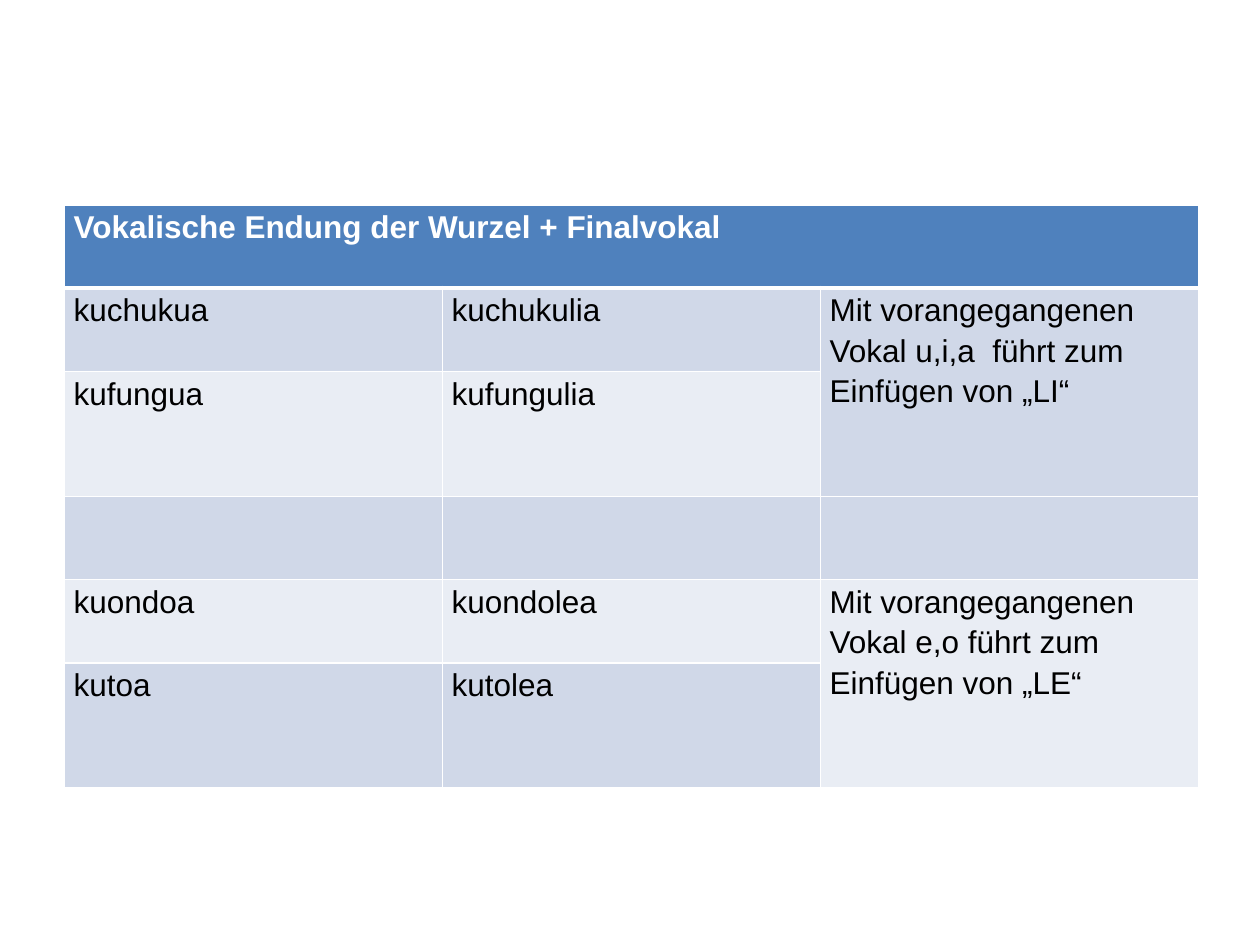
from dataclasses import dataclass

from lxml.etree import SubElement
from pptx import Presentation
from pptx.dml.color import RGBColor
from pptx.oxml.ns import qn
from pptx.table import Table, _Cell
from pptx.util import Pt

COLORS = {
    "header": "4F81BD",
    "dark_band": "D0D8E8",
    "light_band": "E9EDF4",
    "border": "FFFFFF",
    "header_text": "FFFFFF",
    "body_text": "000000",
}
ROW_HEIGHTS = (47.6, 47.6, 71.4, 47.6, 47.6, 71.4)
COLUMN_WIDTH = 216
COLUMN_COUNT = 3


@dataclass(frozen=True)
class Entry:
    """Text of a table cell, its place and the cells it spans."""

    row: int
    column: int
    text: str
    rows: int = 1
    columns: int = 1


ENTRIES = (
    Entry(0, 0, "Vokalische Endung der Wurzel + Finalvokal", columns=3),
    Entry(1, 0, "kuchukua"),
    Entry(1, 1, "kuchukulia"),
    Entry(1, 2, "Mit vorangegangenen Vokal u,i,a  führt zum Einfügen von „LI“", rows=2),
    Entry(2, 0, "kufungua"),
    Entry(2, 1, "kufungulia"),
    Entry(4, 0, "kuondoa"),
    Entry(4, 1, "kuondolea"),
    Entry(4, 2, "Mit vorangegangenen Vokal e,o führt zum Einfügen von „LE“", rows=2),
    Entry(5, 0, "kutoa"),
    Entry(5, 1, "kutolea"),
)


def write_text(cell: _Cell, text: str, *, color: str, bold: bool = False,
               size: float = 18, font: str = "Arial", spacing: float = 1.15) -> None:
    """Write one formatted paragraph into a cell."""
    para = cell.text_frame.paragraphs[0]
    para.line_spacing = spacing
    span = para.add_run()
    span.text = text
    span.font.name = font
    span.font.size = Pt(size)
    span.font.bold = bold
    span.font.color.rgb = RGBColor.from_string(COLORS[color])


def draw_borders(cell: _Cell, *, top: float, bottom: float) -> None:
    """Give a cell white borders with the given widths above and below."""
    properties = cell._tc.get_or_add_tcPr()
    for side, width in {"L": 1, "R": 1, "T": top, "B": bottom}.items():
        line = SubElement(properties, qn(f"a:ln{side}"), w=str(Pt(width)))
        fill = SubElement(line, qn("a:solidFill"))
        SubElement(fill, qn("a:srgbClr"), val=COLORS["border"])


def format_cell(cell: _Cell, row: int) -> None:
    """Set the margins, borders and banded fill of a cell."""
    cell.margin_left = cell.margin_right = Pt(5.2)
    cell.margin_top = cell.margin_bottom = Pt(0)
    draw_borders(cell, top=3 if row == 1 else 1, bottom=3 if row == 0 else 1)
    band = "header" if row == 0 else "dark_band" if row % 2 else "light_band"
    cell.fill.solid()
    cell.fill.fore_color.rgb = RGBColor.from_string(COLORS[band])


def place_entry(table: Table, entry: Entry) -> None:
    """Merge the cells of an entry and write its text."""
    cell = table.cell(entry.row, entry.column)
    if entry.rows > 1 or entry.columns > 1:
        cell.merge(table.cell(entry.row + entry.rows - 1,
                              entry.column + entry.columns - 1))
    header = entry.row == 0
    write_text(cell, entry.text, color="header_text" if header else "body_text", bold=header)


def main() -> None:
    """Build the slide with the table of verb endings."""
    deck = Presentation()
    deck.slide_width, deck.slide_height = Pt(720), Pt(540)
    slide = deck.slides.add_slide(deck.slide_layouts[6])
    table = slide.shapes.add_table(
        len(ROW_HEIGHTS), COLUMN_COUNT, Pt(36.9), Pt(117),
        Pt(COLUMN_WIDTH * COLUMN_COUNT), Pt(sum(ROW_HEIGHTS))).table
    for column in table.columns:
        column.width = Pt(COLUMN_WIDTH)
    for index, height in enumerate(ROW_HEIGHTS):
        table.rows[index].height = Pt(height)
        for cell in table.rows[index].cells:
            format_cell(cell, index)
    for entry in ENTRIES:
        place_entry(table, entry)
    deck.save("out.pptx")


if __name__ == "__main__":
    main()
